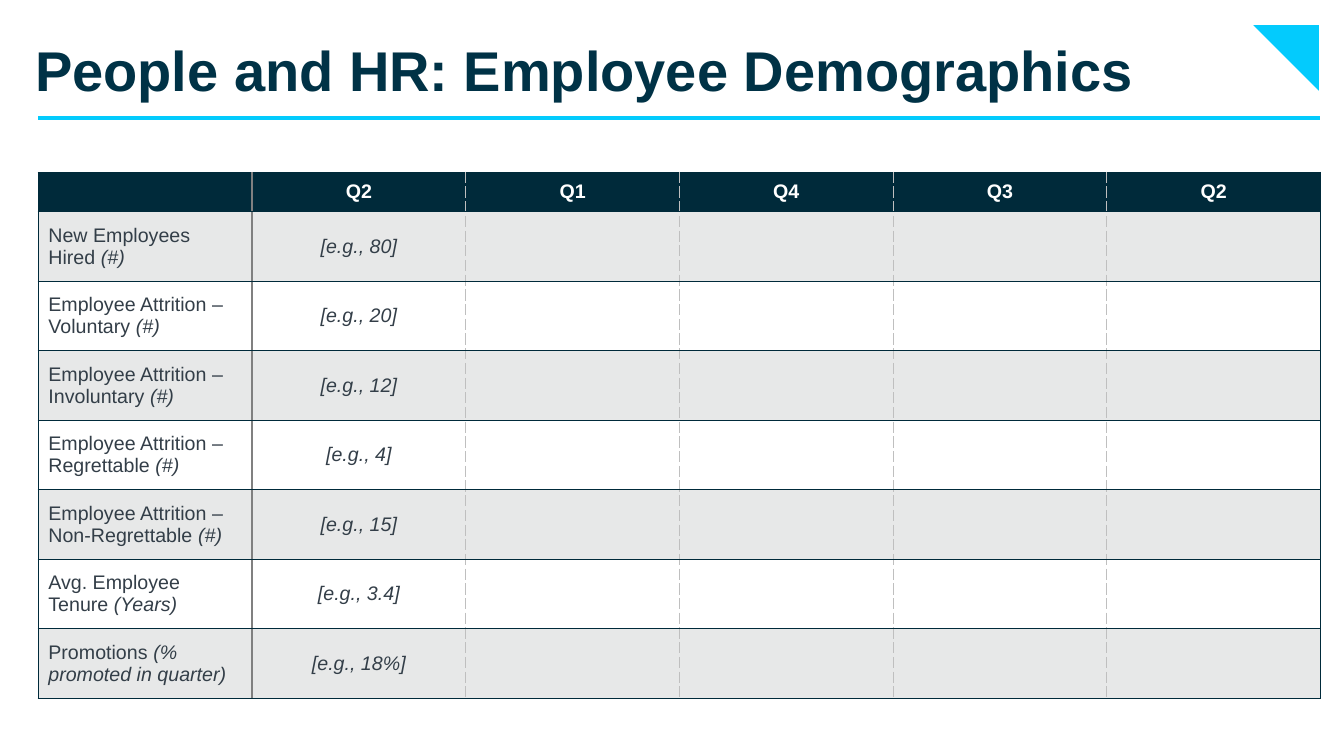
"""Build the employee demographics slide."""
from dataclasses import dataclass
from typing import Any

from lxml import etree
from pptx import Presentation
from pptx.dml.color import RGBColor
from pptx.enum.shapes import MSO_CONNECTOR, MSO_SHAPE
from pptx.enum.text import MSO_ANCHOR, PP_ALIGN
from pptx.oxml.ns import qn
from pptx.util import Inches, Pt

STRAIGHT = MSO_CONNECTOR.STRAIGHT
CORNER = MSO_SHAPE.RIGHT_TRIANGLE
MIDDLE = MSO_ANCHOR.MIDDLE
LEFT, CENTER = PP_ALIGN.LEFT, PP_ALIGN.CENTER


@dataclass(frozen=True)
class Theme:
    """Colours, font and type sizes."""
    font: str = "Arial"
    title: str = "003246"
    accent: str = "03CBFD"
    navy: str = "002A3A"
    text: str = "333E48"
    white: str = "FFFFFF"
    band: str = "E7E8E8"
    gray: str = "808080"
    light: str = "BFBFBF"
    title_size: int = 40
    table_size: int = 14


@dataclass(frozen=True)
class Edge:
    """A cell border."""
    color: str
    dash: str = "solid"


@dataclass(frozen=True)
class Metric:
    """A table row: label, unit and sample value."""
    label: str
    unit: str
    sample: str


THEME = Theme()
NAVY = Edge(THEME.navy)
GRAY = Edge(THEME.gray)
DASH = Edge(THEME.light, "lgDash")
QUARTERS = ["Q2", "Q1", "Q4", "Q3", "Q2"]
COLUMNS = [NAVY, GRAY] + [DASH] * (len(QUARTERS) - 1) + [NAVY]
METRICS = [
    Metric("New Employees Hired ", "(#)", "[e.g., 80]"),
    Metric("Employee Attrition – Voluntary ", "(#)", "[e.g., 20]"),
    Metric("Employee Attrition – Involuntary ", "(#)", "[e.g., 12]"),
    Metric("Employee Attrition –Regrettable ", "(#)", "[e.g., 4]"),
    Metric("Employee Attrition –Non-Regrettable ", "(#)", "[e.g., 15]"),
    Metric("Avg. Employee Tenure ", "(Years)", "[e.g., 3.4]"),
    Metric("Promotions ", "(% promoted in quarter)", "[e.g., 18%]"),
]


def set_font(font: Any, size: int, color: str, bold: bool = False) -> None:
    """Apply the theme font with a size, colour and weight."""
    font.name = THEME.font
    font.size = Pt(size)
    font.bold = bold
    font.color.rgb = RGBColor.from_string(color)


def add_title(slide: Any, text: str) -> None:
    """Add the slide title."""
    box = slide.shapes.add_textbox(Inches(0.25), Inches(0.25), Inches(12.84), Inches(1.18))
    frame = box.text_frame
    frame.word_wrap = True
    frame.margin_top = frame.margin_bottom = Inches(0.1)
    line = frame.paragraphs[0]
    line.text = text
    set_font(line.font, THEME.title_size, THEME.title, True)


def add_corner(slide: Any) -> None:
    """Add the triangle in the top right corner."""
    shape = slide.shapes.add_shape(CORNER, Inches(12.43), Inches(0.25), Inches(0.65), Inches(0.65))
    shape.rotation = 180
    shape.shadow.inherit = False
    shape.fill.solid()
    shape.fill.fore_color.rgb = RGBColor.from_string(THEME.accent)
    shape.line.fill.background()


def add_rule(slide: Any) -> None:
    """Add the line under the title."""
    rule = slide.shapes.add_connector(STRAIGHT, Inches(0.38), Inches(1.17), Inches(13.09), Inches(1.17))
    rule.line.width = Pt(3)
    rule.line.color.rgb = RGBColor.from_string(THEME.accent)
    etree.SubElement(rule.element.spPr, qn("a:effectLst"))


def add_edge(cell: Any, side: str, edge: Edge) -> None:
    """Add a border to one side of a cell."""
    line = etree.SubElement(cell._tc.get_or_add_tcPr(), qn(f"a:ln{side}"), w=str(Pt(1)))
    fill = etree.SubElement(line, qn("a:solidFill"))
    etree.SubElement(fill, qn("a:srgbClr"), val=edge.color)
    etree.SubElement(line, qn("a:prstDash"), val=edge.dash)


def style_cell(cell: Any, row: int, col: int) -> None:
    """Set the borders, fill and text style of a cell."""
    edges = {"L": COLUMNS[col], "R": COLUMNS[col + 1], "T": NAVY, "B": NAVY}
    for side, edge in edges.items():
        add_edge(cell, side, edge)
    head = row == 0
    color = THEME.navy if head else THEME.band if row % 2 else THEME.white
    cell.fill.solid()
    cell.fill.fore_color.rgb = RGBColor.from_string(color)
    cell.vertical_anchor = MIDDLE
    line = cell.text_frame.paragraphs[0]
    line.alignment = CENTER if col else LEFT
    set_font(line.font, THEME.table_size, THEME.white if head else THEME.text, head)


def add_grid(slide: Any) -> None:
    """Add the table of metrics by quarter."""
    rows, cols = len(METRICS) + 1, len(QUARTERS) + 1
    frame = slide.shapes.add_table(rows, cols, Inches(0.38), Inches(1.71), Inches(12.72), Inches(5.22))
    table = frame.table
    table.first_row = table.horz_banding = False
    for index, row in enumerate(table.rows):
        row.height = Inches(0.69 if index else 0.39)
    for col, name in enumerate(QUARTERS, 1):
        table.cell(0, col).text = name
    for row, metric in enumerate(METRICS, 1):
        label = table.cell(row, 0).text_frame.paragraphs[0]
        label.add_run().text = metric.label
        unit = label.add_run()
        unit.text = metric.unit
        unit.font.italic = True
        sample = table.cell(row, 1)
        sample.text = metric.sample
        sample.text_frame.paragraphs[0].font.italic = True
    for row in range(rows):
        for col in range(cols):
            style_cell(table.cell(row, col), row, col)


def main() -> None:
    """Build and save the slide."""
    deck = Presentation()
    deck.slide_width, deck.slide_height = Inches(13.33), Inches(7.5)
    slide = deck.slides.add_slide(deck.slide_layouts[6])
    add_corner(slide)
    add_title(slide, "People and HR: Employee Demographics")
    add_rule(slide)
    add_grid(slide)
    deck.save("out.pptx")


if __name__ == "__main__":
    main()
